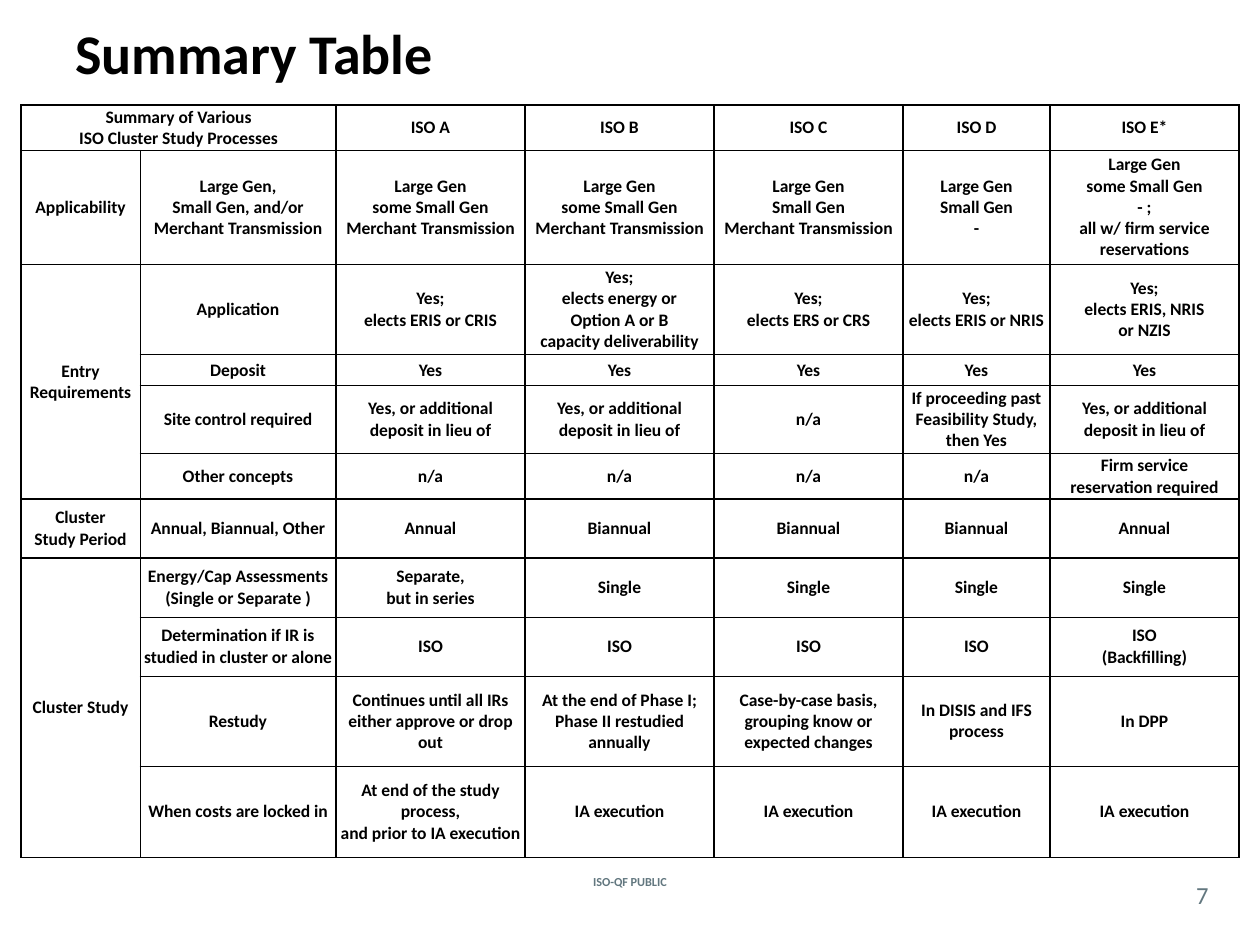
from dataclasses import dataclass

from lxml import etree
from pptx import Presentation
from pptx import util as u
from pptx.dml.color import RGBColor
from pptx.enum import text
from pptx.oxml import ns

COLORS = {"ink": "000000", "footer": "62777F"}
FONT = "Calibri"
HEAVY, THIN = 1, 0.5

COLUMN_WIDTHS = [68, 112, 108, 108, 108, 84, 108]
MERCHANT = "Merchant Transmission"
LIEU = "Yes, or additional\ndeposit in lieu of"


@dataclass
class Row:
    height: float
    label: str
    answers: list[str]


@dataclass
class Section:
    title: str
    rows: list[Row]


HEADING = "Summary of Various\nISO Cluster Study Processes"
OPERATORS = ["ISO A", "ISO B", "ISO C", "ISO D", "ISO E*"]
HEADER_HEIGHT = 26

SECTIONS = [
    Section("Applicability", [
        Row(65, f"Large Gen,\nSmall Gen, and/or\n{MERCHANT}", [
            f"Large Gen\nsome Small Gen\n{MERCHANT}",
            f"Large Gen\nsome Small Gen\n{MERCHANT}",
            f"Large Gen\nSmall Gen\n{MERCHANT}",
            "Large Gen\nSmall Gen\n-",
            "Large Gen\nsome Small Gen\n- ;\nall w/ firm service reservations"]),
    ]),
    Section("Entry\nRequirements", [
        Row(51.8, "Application", [
            "Yes;\nelects ERIS or CRIS",
            "Yes;\nelects energy or\nOption A or B\ncapacity deliverability",
            "Yes;\nelects ERS or CRS",
            "Yes;\nelects ERIS or NRIS",
            "Yes;\nelects ERIS, NRIS\nor NZIS"]),
        Row(17.5, "Deposit", ["Yes"] * 5),
        Row(39, "Site control required", [
            LIEU, LIEU, "n/a",
            "If proceeding past\nFeasibility Study,\nthen Yes", LIEU]),
        Row(26, "Other concepts",
            ["n/a"] * 4 + ["Firm service\nreservation required"]),
    ]),
    Section("Cluster\nStudy Period", [
        Row(33.7, "Annual, Biannual, Other",
            ["Annual", "Biannual", "Biannual", "Biannual", "Annual"]),
    ]),
    Section("Cluster Study", [
        Row(33.7, "Energy/Cap Assessments\n(Single or Separate )",
            ["Separate,\nbut in series"] + ["Single"] * 4),
        Row(33.7, "Determination if IR is\nstudied in cluster or alone",
            ["ISO"] * 4 + ["ISO\n(Backfilling)"]),
        Row(51.8, "Restudy", [
            "Continues until all IRs either approve or drop out",
            "At the end of Phase I;\nPhase II restudied annually",
            "Case-by-case basis, grouping know or expected changes",
            "In DISIS and IFS process",
            "In DPP"]),
        Row(51.8, "When costs are locked in",
            ["At end of the study process,\nand prior to IA execution"]
            + ["IA execution"] * 4),
    ]),
]


def write(frame, content: str, *, size: float, color: str = "ink",
          bold: bool = True, center: bool = True) -> None:
    """Fill a text frame, one paragraph per line."""
    frame.word_wrap = True
    for index, line in enumerate(content.split("\n")):
        paragraph = frame.paragraphs[0] if index == 0 else frame.add_paragraph()
        paragraph.alignment = text.PP_ALIGN.CENTER if center else text.PP_ALIGN.LEFT
        run = paragraph.add_run()
        run.text = line
        run.font.name = FONT
        run.font.size = u.Pt(size)
        run.font.bold = bold
        run.font.color.rgb = RGBColor.from_string(COLORS[color])


def add_label(slide, content: str, box: tuple, inset: bool = True, **style) -> None:
    label = slide.shapes.add_textbox(*(u.Pt(length) for length in box))
    frame = label.text_frame
    frame.vertical_anchor = text.MSO_ANCHOR.MIDDLE
    if not inset:
        frame.margin_left = frame.margin_right = 0
        frame.margin_top = frame.margin_bottom = 0
    write(frame, content, **style)


def format_cell(cell, **borders: float) -> None:
    """Set margins, anchor, border widths (keys L, R, T, B) and no fill."""
    cell.margin_left = cell.margin_right = cell.margin_top = cell.margin_bottom = 0
    cell.vertical_anchor = text.MSO_ANCHOR.MIDDLE
    properties = cell._tc.get_or_add_tcPr()
    for side in "LRTB":
        if side in borders:
            line = etree.SubElement(properties, ns.qn(f"a:ln{side}"),
                                    w=str(u.Pt(borders[side])))
            fill = etree.SubElement(line, ns.qn("a:solidFill"))
            etree.SubElement(fill, ns.qn("a:srgbClr"), val=COLORS["ink"])
    cell.fill.background()


def add_summary(slide, left: float, top: float) -> None:
    heights = [HEADER_HEIGHT] + [row.height for part in SECTIONS for row in part.rows]
    frame = slide.shapes.add_table(
        len(heights), len(COLUMN_WIDTHS), u.Pt(left), u.Pt(top),
        u.Pt(sum(COLUMN_WIDTHS)), u.Pt(sum(heights)))
    table = frame.table
    table.first_row = table.horz_banding = False
    for column, width in zip(table.columns, COLUMN_WIDTHS):
        column.width = u.Pt(width)
    for table_row, height in zip(table.rows, heights):
        table_row.height = u.Pt(height)

    # Header row
    table.cell(0, 0).merge(table.cell(0, 1))
    for col, content in enumerate([HEADING, None] + OPERATORS):
        cell = table.cell(0, col)
        sides = {"L": HEAVY, "R": HEAVY}
        if col < 2:
            del sides["RL"[col]]
        format_cell(cell, T=HEAVY, B=HEAVY, **sides)
        if content:
            write(cell.text_frame, content, size=10)

    # Sections: heavy lines around each, thin lines inside
    start = 1
    for section in SECTIONS:
        last = start + len(section.rows) - 1
        if last > start:
            table.cell(start, 0).merge(table.cell(last, 0))
        write(table.cell(start, 0).text_frame, section.title, size=10)
        for index, row in enumerate(section.rows, start):
            edges = {"T": HEAVY} if index == start else {}
            if index == last or index == start:
                edges["B"] = HEAVY
            format_cell(table.cell(index, 0), L=HEAVY, R=THIN, **edges)
            for col, content in enumerate([row.label] + row.answers, 1):
                cell = table.cell(index, col)
                format_cell(cell, L=THIN if col == 1 else HEAVY, R=HEAVY,
                            T=HEAVY if index == start else THIN,
                            B=HEAVY if index == last else THIN)
                write(cell.text_frame, content, size=10)
        start = last + 1


def main() -> None:
    deck = Presentation()
    deck.slide_width, deck.slide_height = u.Pt(720), u.Pt(540)
    slide = deck.slides.add_slide(deck.slide_layouts[6])

    # Footer and page number
    add_label(slide, "ISO-QF PUBLIC", (307, 498, 106, 12), size=7, color="footer")
    add_label(slide, "7", (672, 501, 30, 21), inset=False,
              size=14, color="footer", bold=False)

    # Title and table
    add_label(slide, "Summary Table", (36, 6, 648, 48), size=32, center=False)
    add_summary(slide, 12, 60)

    deck.save("out.pptx")


if __name__ == "__main__":
    main()
